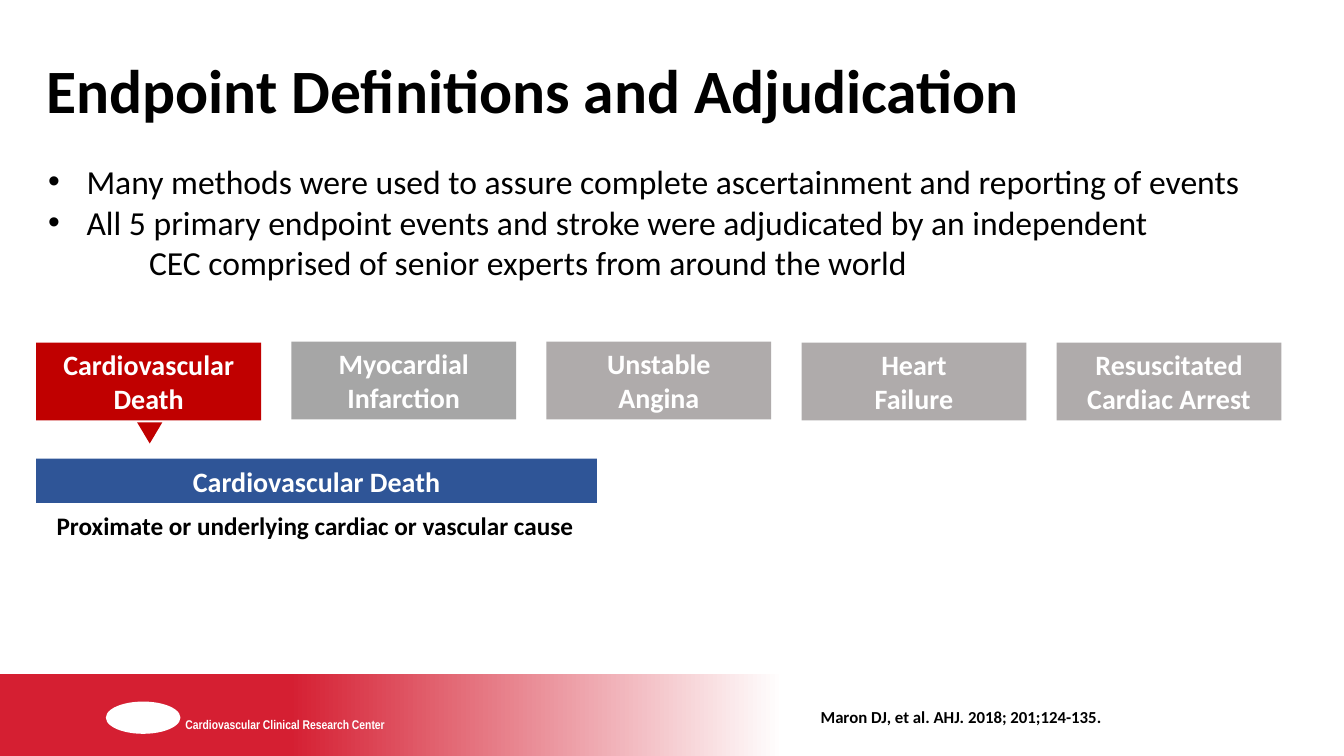
from lxml.etree import SubElement
from pptx import Presentation
from pptx.dml.color import RGBColor
from pptx.enum.shapes import MSO_SHAPE
from pptx.enum.text import MSO_ANCHOR, MSO_AUTO_SIZE, PP_ALIGN
from pptx.oxml.ns import qn
from pptx.util import Inches, Pt

COLORS = {
    "white": "FFFFFF",
    "black": "000000",
    "banner": "D51F32",
    "red": "C00000",
    "gray": "A6A6A6",
    "warm_gray": "AFABAB",
    "blue": "2F5597",
}


def add_block(slide, kind, left, top, width, height, color):
    shape = slide.shapes.add_shape(
        kind, Inches(left), Inches(top), Inches(width), Inches(height)
    )
    shape.shadow.inherit = False
    shape.line.fill.background()
    shape.fill.solid()
    shape.fill.fore_color.rgb = RGBColor.from_string(COLORS[color])
    return shape


def write(paragraph, text, size, color, bold=True, font="Calibri", align=PP_ALIGN.LEFT):
    paragraph.alignment = align
    for index, line in enumerate(text.split("\n")):
        if index:
            paragraph.add_line_break()
        run = paragraph.add_run()
        run.text = line
        run.font.name = font
        run.font.size = Pt(size)
        run.font.bold = bold
        run.font.color.rgb = RGBColor.from_string(COLORS[color])


presentation = Presentation()
presentation.slide_width = Inches(13.33)
presentation.slide_height = Inches(7.5)
slide = presentation.slides.add_slide(presentation.slide_layouts[5])

banner = add_block(slide, MSO_SHAPE.RECTANGLE, -0.01, 6.69, 7.78, 0.81, "banner")
banner.fill.gradient()
banner.fill.gradient_angle = 180
for stop, (position, color) in zip(
    banner.fill.gradient_stops, [(0, "white"), (0.63, "banner")]
):
    stop.position = position
    stop.color.rgb = RGBColor.from_string(COLORS[color])
add_block(slide, MSO_SHAPE.OVAL, 1.05, 6.96, 0.74, 0.32, "white")

title = slide.shapes.title
title.left, title.top = Inches(0.36), Inches(0.4)
title.width, title.height = Inches(12.41), Inches(1.05)
title.text_frame.auto_size = MSO_AUTO_SIZE.NONE
title.text_frame.vertical_anchor = MSO_ANCHOR.MIDDLE
title_paragraph = title.text_frame.paragraphs[0]
title_paragraph.line_spacing = 0.9
write(title_paragraph, "Endpoint Definitions and Adjudication", 44, "black")

methods = slide.shapes.add_textbox(
    Inches(0.38), Inches(1.55), Inches(12.12), Inches(1.31)
)
methods.text_frame.word_wrap = False
method_lines = [
    ("Many methods were used to assure complete ascertainment and reporting of events", True),
    ("All 5 primary endpoint events and stroke were adjudicated by an independent", True),
    ("CEC comprised of senior experts from around the world", False),
]
for index, (text, bulleted) in enumerate(method_lines):
    frame = methods.text_frame
    paragraph = frame.add_paragraph() if index else frame.paragraphs[0]
    properties = paragraph._p.get_or_add_pPr()
    properties.set("marL", str(Inches(0.38 if bulleted else 1)))
    properties.set("indent", str(Inches(-0.38 if bulleted else 0)))
    if bulleted:
        SubElement(properties, qn("a:buFont")).set("typeface", "Arial")
        SubElement(properties, qn("a:buChar")).set("char", "•")
    write(paragraph, text, 24, "black", bold=False)

endpoints = [
    ("Cardiovascular Death", 3.4, "red"),
    ("Myocardial Infarction", 3.39, "gray"),
    ("Unstable\nAngina", 3.39, "warm_gray"),
    ("Heart\nFailure", 3.4, "warm_gray"),
    ("Resuscitated Cardiac Arrest", 3.4, "warm_gray"),
]
bars = [
    (text, 0.36 + 2.53 * column, top, 2.23, 0.77, color)
    for column, (text, top, color) in enumerate(endpoints)
]
bars.append(("Cardiovascular Death", 0.36, 4.55, 5.56, 0.44, "blue"))
for text, left, top, width, height, color in bars:
    bar = add_block(slide, MSO_SHAPE.RECTANGLE, left, top, width, height, color)
    bar.text_frame.word_wrap = True
    bar.text_frame.vertical_anchor = MSO_ANCHOR.MIDDLE
    write(bar.text_frame.paragraphs[0], text, 20, "white", align=PP_ALIGN.CENTER)

pointer = add_block(slide, MSO_SHAPE.ISOSCELES_TRIANGLE, 1.36, 4.19, 0.25, 0.21, "red")
pointer.rotation = 180

captions = [
    ("Proximate or underlying cardiac or vascular cause",
     0.33, 5.01, 5.59, 0.4, 18, "black", "Calibri", PP_ALIGN.CENTER),
    ("Maron DJ, et al. AHJ. 2018; 201;124-135.",
     8.04, 6.96, 3.09, 0.3, 12, "black", "Calibri", PP_ALIGN.LEFT),
    ("Cardiovascular Clinical Research Center",
     1.74, 7.06, 2.39, 0.15, 9, "white", "Arial Narrow", PP_ALIGN.LEFT),
]
for text, left, top, width, height, size, color, font, align in captions:
    caption = slide.shapes.add_textbox(
        Inches(left), Inches(top), Inches(width), Inches(height)
    )
    caption.text_frame.word_wrap = True
    write(caption.text_frame.paragraphs[0], text, size, color, font=font, align=align)

presentation.save("out.pptx")
